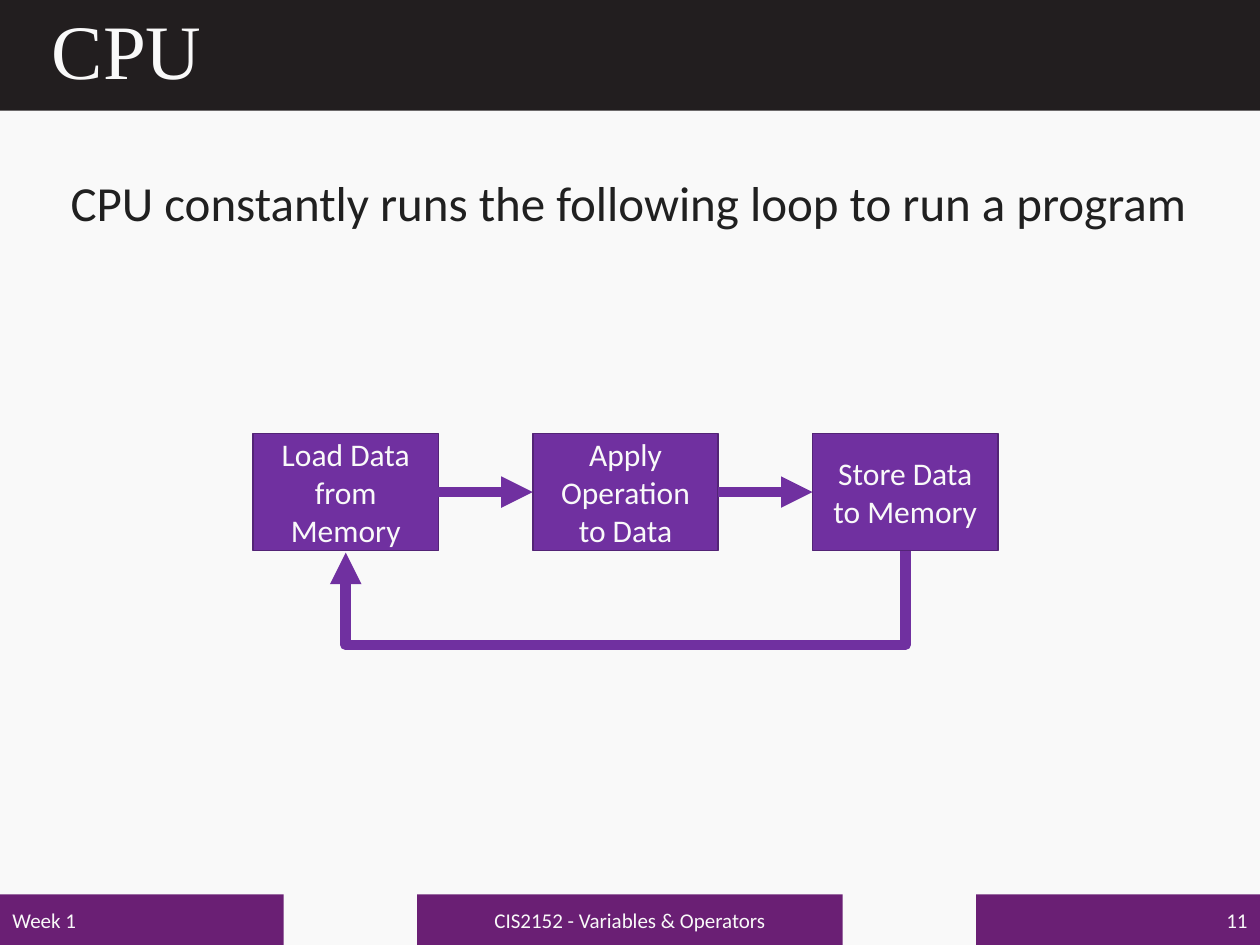
from dataclasses import dataclass
from typing import Optional

from lxml import etree
from pptx import Presentation
from pptx.dml.color import RGBColor
from pptx.enum import shapes, text
from pptx.oxml import ns
from pptx.util import Cm, Pt

PURPLE = "7030A0"
FOOTER_PURPLE = "6A1F74"
PALE = "F9F9F9"
LEFT, CENTER, RIGHT = text.PP_ALIGN.LEFT, text.PP_ALIGN.CENTER, text.PP_ALIGN.RIGHT


@dataclass
class Panel:
    left: float
    top: float
    width: float
    height: float
    fill: str
    words: str = ""
    size: int = 12
    align: text.PP_ALIGN = CENTER
    outline: Optional[str] = None


def rgb(value: str) -> RGBColor:
    return RGBColor.from_string(value)


def apply(target, values: dict) -> None:
    for name, value in values.items():
        setattr(target, name, value)


def place(target, left: float, top: float, width: float, height: float) -> None:
    box = {"left": left, "top": top, "width": width, "height": height}
    apply(target, {side: Cm(length) for side, length in box.items()})


def write(target, words: str, size: int, color: str, align, font: str = "Calibri", **frame) -> None:
    apply(target.text_frame, {"vertical_anchor": text.MSO_ANCHOR.MIDDLE, "word_wrap": True, **frame})
    paragraph = target.text_frame.paragraphs[0]
    paragraph.alignment = align
    run = paragraph.add_run()
    run.text = words
    apply(run.font, {"size": Pt(size), "name": font})
    run.font.color.rgb = rgb(color)


def draw_panel(slide, panel: Panel):
    shape = slide.shapes.add_shape(
        shapes.MSO_SHAPE.RECTANGLE,
        Cm(panel.left), Cm(panel.top), Cm(panel.width), Cm(panel.height))
    shape.shadow.inherit = False
    shape.fill.solid()
    shape.fill.fore_color.rgb = rgb(panel.fill)
    if panel.outline:
        shape.line.color.rgb = rgb(panel.outline)
        shape.line.width = Pt(1)
    else:
        shape.line.fill.background()
    if panel.words:
        write(shape, panel.words, panel.size, PALE, panel.align)
    return shape


def draw_arrow(slide, kind):
    arrow = slide.shapes.add_connector(kind, 0, 0, 0, 0)
    arrow.line.color.rgb = rgb(PURPLE)
    arrow.line.width = Pt(6)
    etree.SubElement(arrow.line._get_or_add_ln(), ns.qn("a:tailEnd"), type="triangle")
    etree.SubElement(arrow._element.spPr, ns.qn("a:effectLst"))
    return arrow


def draw_return_arrow(slide, first: Panel, last: Panel, drop: float) -> None:
    thickness, span = 0.04, last.left - first.left
    center = (first.left + last.left + first.width) / 2
    bottom = first.top + first.height
    arrow = draw_arrow(slide, shapes.MSO_CONNECTOR.ELBOW)
    place(arrow, center - thickness / 2, bottom + (thickness - span) / 2, thickness, span)
    properties = arrow._element.spPr
    properties.find(ns.qn("a:xfrm")).set("rot", "5400000")
    geometry = properties.find(ns.qn("a:prstGeom"))
    adjustments = geometry.find(ns.qn("a:avLst"))
    if adjustments is None:
        adjustments = etree.SubElement(geometry, ns.qn("a:avLst"))
    bend = round(drop / thickness * 100000)
    etree.SubElement(adjustments, ns.qn("a:gd"), name="adj1", fmla=f"val {bend}")


def main() -> None:
    prs = Presentation()
    apply(prs, {"slide_width": Cm(25.4), "slide_height": Cm(19.05)})
    slide = prs.slides.add_slide(prs.slide_layouts[1])
    slide.background.fill.solid()
    slide.background.fill.fore_color.rgb = rgb(PALE)

    header = draw_panel(slide, Panel(0, 0, 25.4, 2.23, "221E1F"))
    slide.shapes._spTree.insert(2, header._element)

    title = slide.shapes.title
    place(title, 0.79, 0, 23.85, 2.18)
    write(title, "CPU", 44, PALE, LEFT, "Times New Roman")
    title.text_frame.paragraphs[0].line_spacing = 0.9

    statement = slide.placeholders[1]
    place(statement, 1.17, 3.35, 23.24, 1.45)
    write(statement, "CPU constantly runs the following loop to run a program", 28, "202020", LEFT,
          word_wrap=False, auto_size=text.MSO_AUTO_SIZE.SHAPE_TO_FIT_TEXT)
    statement_paragraph = statement.text_frame.paragraphs[0]
    statement_paragraph.space_before = Pt(0)
    bullet = statement_paragraph._p.get_or_add_pPr()
    bullet.set("marL", "0")
    bullet.set("indent", "0")
    etree.SubElement(bullet, ns.qn("a:buNone"))

    footer = [
        (0, 5.72, "Week 1", LEFT),
        (8.41, 8.58, "CIS2152 - Variables & Operators", CENTER),
        (19.68, 5.72, "11", RIGHT),
    ]
    for left, width, words, align in footer:
        draw_panel(slide, Panel(left, 18.03, width, 1.02, FOOTER_PURPLE, words, align=align))

    stages = ["Load Data from Memory", "Apply Operation to Data", "Store Data to Memory"]
    steps = [Panel(5.1 + 5.64 * index, 8.74, 3.74, 2.36, PURPLE, words, 18, outline="532476")
             for index, words in enumerate(stages)]
    boxes = [draw_panel(slide, step) for step in steps]
    for source, target in zip(boxes, boxes[1:]):
        arrow = draw_arrow(slide, shapes.MSO_CONNECTOR.STRAIGHT)
        arrow.begin_connect(source, 3)
        arrow.end_connect(target, 1)
    draw_return_arrow(slide, steps[0], steps[-1], 1.9)

    prs.save("out.pptx")


if __name__ == "__main__":
    main()
